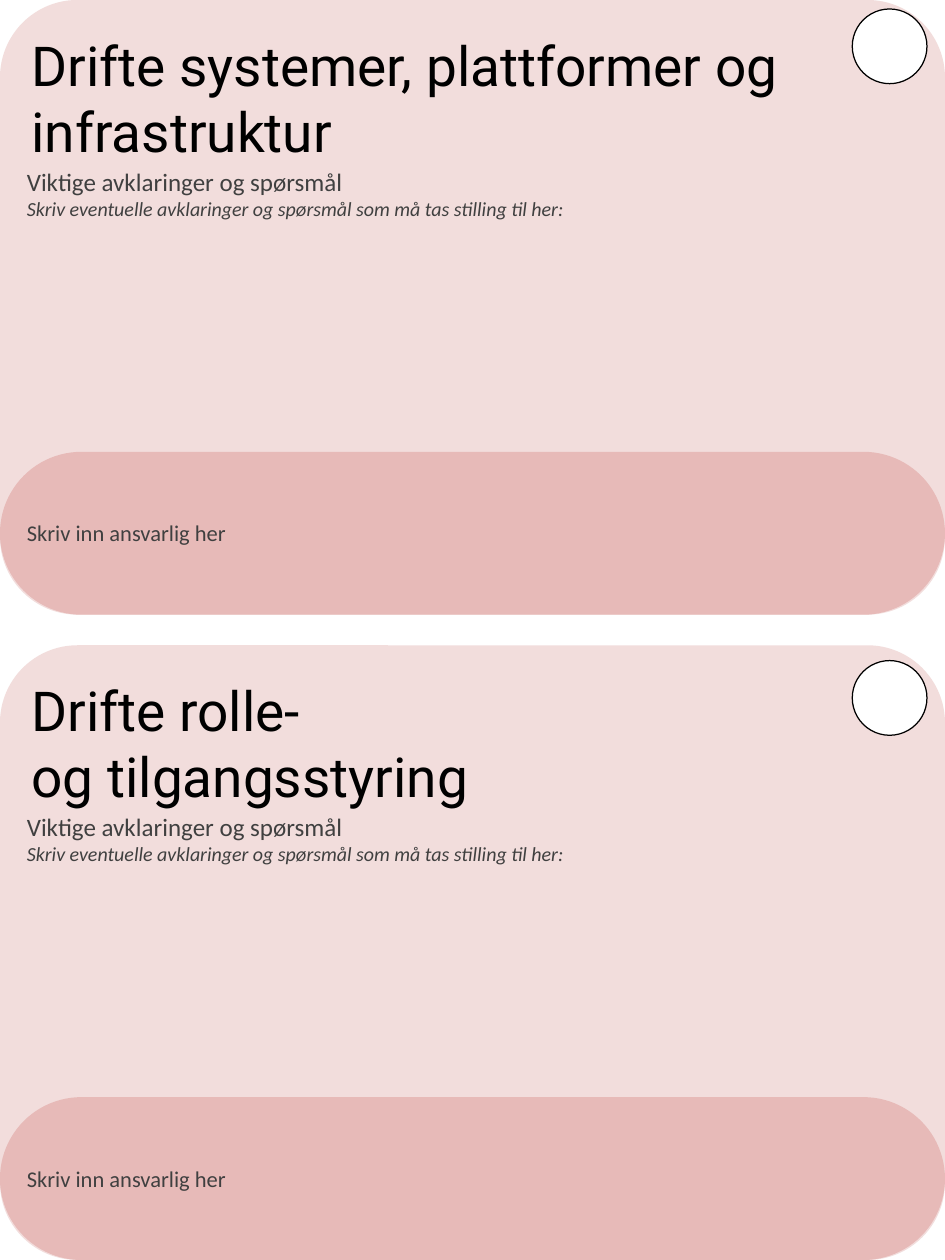
from pptx import Presentation
from pptx.dml.color import RGBColor
from pptx.enum.shapes import MSO_SHAPE as Shape
from pptx.enum.text import MSO_ANCHOR as Anchor, MSO_AUTO_SIZE as AutoSize, PP_ALIGN as Align
from pptx.util import Inches, Pt

COLORS = {"card": "F2DDDC", "band": "E7BAB8", "title": "000000",
          "body": "404040", "circle": "FFFFFF", "outline": "000000"}
WIDTH, HEIGHT = 10.5, 14
CARD_HEIGHT = 6.83
BAND_HEIGHT = 1.81
MARGIN = 0.2
CIRCLE = 0.83

CARDS = [
    (["Drifte systemer, plattformer og infrastruktur"], 0.1),
    (["Drifte rolle- ", "og tilgangsstyring"], 0.17),
]


def color(name):
    return RGBColor.from_string(COLORS[name])


def add_form(slide, kind, box, fill, corner=None):
    form = slide.shapes.add_shape(kind, *map(Inches, box))
    form.shadow.inherit = False
    form.fill.solid()
    form.fill.fore_color.rgb = color(fill)
    form.line.fill.background()
    if corner is not None:
        form.adjustments[0] = corner
    return form


def add_run(paragraph, words, size, font, tint, italic=None):
    run = paragraph.add_run()
    run.text = words
    run.font.size = Pt(size)
    run.font.name = font
    run.font.italic = italic
    run.font.color.rgb = color(tint)


def add_note(slide, box, lines):
    note = slide.shapes.add_textbox(*map(Inches, box)).text_frame
    note.word_wrap = True
    note.auto_size = AutoSize.SHAPE_TO_FIT_TEXT
    for index, (words, size, italic) in enumerate(lines):
        paragraph = note.add_paragraph() if index else note.paragraphs[0]
        add_run(paragraph, words, size, "Calibri", "body", italic)


def add_title(card, title_lines):
    frame = card.text_frame
    frame.word_wrap = True
    frame.vertical_anchor = Anchor.TOP
    frame.margin_top = Inches(0.1)
    paragraph = frame.paragraphs[0]
    paragraph.alignment = Align.LEFT
    for index, words in enumerate(title_lines):
        if index:
            paragraph.add_line_break()
        add_run(paragraph, words, 44, "Roboto", "title")


def add_card(slide, box, title_lines, circle_drop):
    left, top, width, height = box
    right, bottom = left + width, top + height
    card = add_form(slide, Shape.ROUNDED_RECTANGLE, box, "card", 0.126)
    add_title(card, title_lines)
    band_top = bottom - BAND_HEIGHT
    add_form(slide, Shape.ROUNDED_RECTANGLE,
             (left, band_top, width, BAND_HEIGHT), "band", 0.5)
    add_note(slide, (left + MARGIN, top + 1.8, width - MARGIN, 0.71), [
        ("Viktige avklaringer og spørsmål", 20, None),
        ("Skriv eventuelle avklaringer og spørsmål som må tas stilling til her:", 16, True),
    ])
    add_note(slide, (left + MARGIN, band_top + 0.7, width / 2, 0.4),
             [("Skriv inn ansvarlig her", 18, None)])
    circle = add_form(slide, Shape.OVAL,
                      (right - MARGIN - CIRCLE, top + circle_drop, CIRCLE, CIRCLE), "circle")
    circle.line.color.rgb = color("outline")
    circle.line.width = Pt(1)


def main():
    deck = Presentation()
    deck.slide_width, deck.slide_height = Inches(WIDTH), Inches(HEIGHT)
    slide = deck.slides.add_slide(deck.slide_layouts[6])
    step = (HEIGHT - CARD_HEIGHT) / (len(CARDS) - 1)
    for index, (title_lines, circle_drop) in enumerate(CARDS):
        add_card(slide, (0, index * step, WIDTH, CARD_HEIGHT), title_lines, circle_drop)
    deck.save("out.pptx")


if __name__ == "__main__":
    main()
